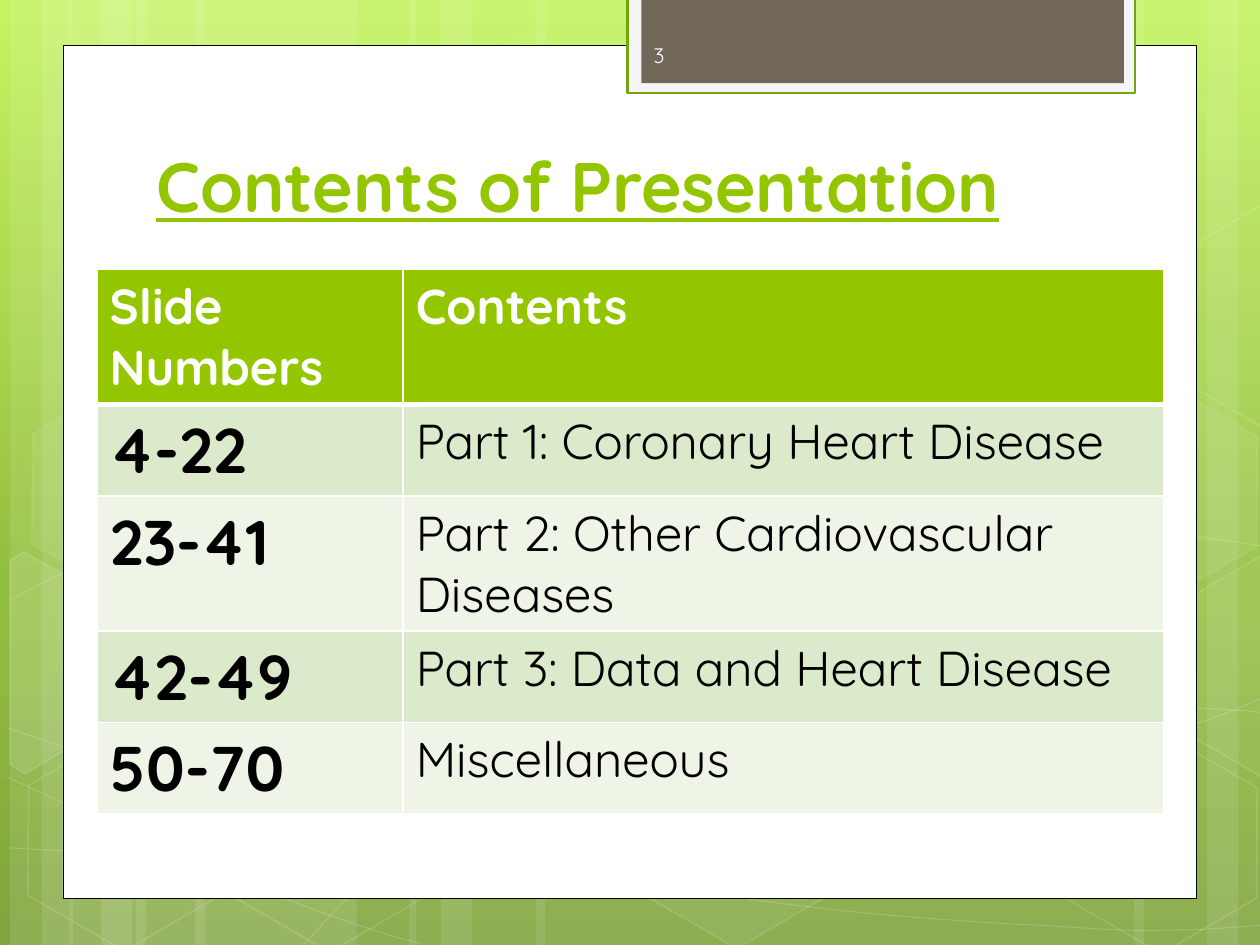
"""Build the contents slide of a heart disease presentation."""
from copy import deepcopy
from typing import NamedTuple, Optional

from lxml import etree
from pptx import Presentation
from pptx import util as u
from pptx.dml.color import RGBColor
from pptx.enum import shapes, text
from pptx.oxml import ns

FONT = "Quicksand"
COLORS = {
    "sky": "C3F35F", "leaf": "93BF3F", "moss": "81A53E", "white": "FFFFFF",
    "black": "000000", "smoke": "F5F5F5", "edge": "74A510", "taupe": "71685A",
    "lime": "94C600", "band": "DCEACC", "pale": "EEF5E7", "number": "FEFEFE",
}


class Panel(NamedTuple):
    left: float
    top: float
    width: float
    height: float
    fill: Optional[str] = None
    fill_alpha: int = 100
    line: Optional[str] = None
    line_width: float = 1
    line_alpha: int = 100
    preset: shapes.MSO_SHAPE = shapes.MSO_SHAPE.RECTANGLE
    rotation: float = 0


class Outline(NamedTuple):
    points: list
    fill_alpha: int = 0


class Entry(NamedTuple):
    slides: str
    topic: str


STRIPS = [(1.08, 1.75), (0.08, 0.5), (0.33, 0.83), (1.55, 1.75), (0.55, 0.5),
          (0.8, 0.83), (7.33, 1.75), (9.58, 0.5), (9, 0.83), (4.25, 3.08),
          (3.25, 0.5), (3.5, 0.83)]

WAVES = [
    [(0.07, 6.73), (0.61, 6.76), (1.15, 6.79), (1.9, 6.78), (2.65, 6.77),
     (3.58, 6.75), (4.58, 6.65), (5.58, 6.55), (7, 6.36), (7.92, 6.17),
     (8.83, 5.98), (9.77, 5.68), (10.07, 5.51)],
    [(0.07, 4.77), (0.36, 4.61), (0.65, 4.46), (1.21, 4.31), (1.78, 4.16),
     (2.59, 3.94), (3.47, 3.87), (4.36, 3.8), (5.44, 3.79), (6.54, 3.87),
     (7.64, 3.95), (9.47, 4.26), (10.07, 4.34)],
    [(0.06, 6.17), (1.27, 6.72), (2.47, 7.27), (3.34, 7.49)],
    [(0.07, 5.78), (0.38, 5.89), (0.7, 6), (1.28, 6.16), (1.86, 6.31),
     (2.73, 6.56), (3.57, 6.73), (4.4, 6.9), (5.45, 7.08), (6.28, 7.18),
     (7.11, 7.29), (8, 7.33), (8.53, 7.36), (9.05, 7.4), (9.19, 7.38),
     (9.45, 7.38), (9.71, 7.37), (9.89, 7.35), (10.07, 7.34)],
    [(2.42, 7.49), (2.6, 7.29), (2.78, 7.09), (3.02, 6.91), (3.26, 6.73),
     (3.6, 6.53), (3.88, 6.39), (4.16, 6.25), (4.33, 6.19), (4.7, 6.09),
     (5.06, 5.99), (5.73, 5.85), (6.08, 5.78), (6.44, 5.71), (6.49, 5.71),
     (6.8, 5.69), (7.11, 5.66), (7.6, 5.63), (7.94, 5.62), (8.29, 5.61),
     (8.86, 5.62), (8.86, 5.62), (9.08, 5.62), (9.31, 5.62), (9.53, 5.62),
     (9.71, 5.63), (9.88, 5.64), (9.97, 5.65), (10.06, 5.66), (10.03, 5.65),
     (10.06, 5.66)],
]

HEXAGONS = [(3.34, 0.36, 4, 8), (4.97, 5.89, 6, 12), (0.11, 5.91, 0, 12),
            (0.14, 3.12, 7, 8), (1.74, 5.92, 0, 12), (7.53, 4.53, 10, 12),
            (8.34, 5.93, 0, 12), (8.34, 3.14, 7, 8)]

CUT_HEXAGONS = [
    Outline([(0.08, 4.45), (0.19, 4.38), (0.96, 4.82), (0.95, 5.7),
             (0.2, 6.14), (0.08, 6.07)], 10),
    Outline([(9.26, 4.85), (10.01, 4.41), (10.09, 4.46), (10.09, 6.13),
             (10.02, 6.17), (9.26, 5.73)], 4),
    Outline([(9.26, 2.07), (10.01, 1.63), (10.1, 1.68), (10.09, 3.35),
             (10.02, 3.39), (9.26, 2.95)]),
]

FRAMES = [
    Panel(0.5, 0.36, 9, 6.77, "white", line="black", line_width=0.5),
    Panel(4.98, -0.02, 4.03, 0.76, "smoke", line="edge", line_width=1.25),
    Panel(5.09, -0.02, 3.83, 0.68, "taupe"),
]

ENTRIES = [
    Entry("Slide Numbers", "Contents"),
    Entry("4-22", "Part 1: Coronary Heart Disease"),
    Entry("23-41", "Part 2: Other Cardiovascular Diseases"),
    Entry("42-49", "Part 3: Data and Heart Disease"),
    Entry("50-70", "Miscellaneous"),
]


def rgb(name: str) -> RGBColor:
    """Look up a colour by name."""
    return RGBColor.from_string(COLORS[name])


def paint(shape, fill: Optional[str], fill_alpha: int, line: Optional[str],
          line_width: float, line_alpha: int) -> None:
    """Set fill and line with their opacity in percent."""
    shape.shadow.inherit = False
    for part, color, alpha, place in (
            (shape.fill, fill, fill_alpha, "p:spPr/a:solidFill/a:srgbClr"),
            (shape.line.fill, line, line_alpha, "p:spPr/a:ln/a:solidFill/a:srgbClr")):
        if color is None or alpha == 0:
            part.background()
            continue
        part.solid()
        part.fore_color.rgb = rgb(color)
        if alpha < 100:
            node = shape.element.xpath(place)[0]
            etree.SubElement(node, ns.qn("a:alpha"), val=str(alpha * 1000))
    if line:
        shape.line.width = u.Pt(line_width)


def draw_panel(slide, panel: Panel) -> None:
    """Draw a preset shape."""
    shape = slide.shapes.add_shape(panel.preset, *map(u.Inches, panel[:4]))
    if panel.preset == shapes.MSO_SHAPE.HEXAGON:
        shape.adjustments[0] = 0.285
    shape.rotation = panel.rotation
    paint(shape, *panel[4:9])


def draw_outline(slide, outline: Outline, close: bool, line_width: float,
                 line_alpha: int):
    """Draw a white freeform through the given points."""
    start, *rest = [(u.Inches(x), u.Inches(y)) for x, y in outline.points]
    builder = slide.shapes.build_freeform(*start)
    builder.add_line_segments(rest, close=close)
    shape = builder.convert_to_shape()
    paint(shape, "white", outline.fill_alpha, "white", line_width, line_alpha)
    return shape


def draw_wave(slide, controls: list) -> None:
    """Draw a chain of cubic Bezier curves."""
    wave = draw_outline(slide, Outline(controls[::3]), False, 0.5, 20)
    for index, segment in enumerate(wave.element.findall(".//" + ns.qn("a:lnTo"))):
        curve = etree.Element(ns.qn("a:cubicBezTo"))
        for x, y in controls[3 * index + 1:3 * index + 4]:
            etree.SubElement(curve, ns.qn("a:pt"), x=str(u.Inches(x) - wave.left),
                             y=str(u.Inches(y) - wave.top))
        segment.getparent().replace(segment, curve)


def move_to_master(slide, master) -> None:
    """Hand the decoration over to the slide master."""
    for shape in list(slide.shapes):
        if not shape.is_placeholder:
            shape.element.xpath("p:nvSpPr/p:cNvPr")[0].set("id", str(100 + shape.shape_id))
            master.shapes.element.append(shape.element)


def set_background(slide) -> None:
    """Fill the background with a vertical three-stop gradient."""
    fill = slide.background.fill
    fill.gradient()
    fill.gradient_angle = 270
    stops = slide.element.find(".//" + ns.qn("a:gsLst"))
    stops.append(deepcopy(stops[-1]))
    for stop, color, position in zip(fill.gradient_stops, ("sky", "leaf", "moss"),
                                     (0, 0.62, 1)):
        stop.color.rgb = rgb(color)
        stop.position = position


def format_text(frame, size: float, color: str, bold: bool = False,
                underline: bool = False) -> None:
    """Format the single run of a text frame."""
    font = frame.paragraphs[0].runs[0].font
    font.name, font.size, font.bold, font.underline = FONT, u.Pt(size), bold, underline
    font.color.rgb = rgb(color)


def set_borders(cell, widths: dict) -> None:
    """Give a cell white borders ahead of its fill."""
    properties = cell._tc.get_or_add_tcPr()
    for index, (side, width) in enumerate(widths.items()):
        border = etree.Element(ns.qn(f"a:{side}"), w=str(u.Pt(width)))
        solid = etree.SubElement(border, ns.qn("a:solidFill"))
        etree.SubElement(solid, ns.qn("a:srgbClr"), val=COLORS["white"])
        properties.insert(index, border)


def draw_contents(slide) -> None:
    """Draw the table of slide ranges and topics, with rows that grow to their text."""
    holder = slide.shapes.add_table(len(ENTRIES), 2, *map(u.Inches, (0.77, 2.14, 8.47, 4.17)))
    contents = holder.table
    for column, width in zip(contents.columns, (2.43, 6.04)):
        column.width = u.Inches(width)
    for row, entry in enumerate(ENTRIES):
        contents.rows[row].height = u.Inches(0.41)
        header = row == 0
        band = "lime" if header else ("pale", "band")[row % 2]
        sides = ("lnL", "lnR", "lnB") if row == 1 else ("lnL", "lnR", "lnT", "lnB")
        for column, wording in enumerate(entry):
            cell = contents.cell(row, column)
            cell.text_frame.text = wording
            format_text(cell.text_frame, 28 if header or column else 36,
                        "white" if header else "black", header or column == 0)
            cell.fill.solid()
            cell.fill.fore_color.rgb = rgb(band)
            set_borders(cell, {side: 3 if header and side == "lnB" else 1 for side in sides})
    holder.height = u.Inches(4.17)


def main() -> None:
    """Build and save the slide."""
    deck = Presentation()
    deck.slide_width, deck.slide_height = u.Inches(10), u.Inches(7.5)
    slide = deck.slides.add_slide(deck.slide_layouts[5])
    set_background(slide)
    for left, width in STRIPS:
        draw_panel(slide, Panel(left, 0, width, 7.5, "white", 10))
    for wave in WAVES:
        draw_wave(slide, wave)
    for left, top, fill_alpha, line_alpha in HEXAGONS:
        draw_panel(slide, Panel(left, top, 1.75, 1.52, "white", fill_alpha, "white", 1,
                                line_alpha, shapes.MSO_SHAPE.HEXAGON, 30))
    for hexagon in CUT_HEXAGONS:
        draw_outline(slide, hexagon, True, 1, 12)
    for frame in FRAMES:
        draw_panel(slide, frame)
    move_to_master(slide, deck.slide_master)

    title = slide.shapes.title
    title.left, title.top, title.width, title.height = map(u.Inches, (1.14, 0.6, 7.68, 1.25))
    title.text_frame.text = "Contents of Presentation"
    title.text_frame.auto_size = text.MSO_AUTO_SIZE.NONE
    title.text_frame.vertical_anchor = text.MSO_ANCHOR.BOTTOM
    title.text_frame.paragraphs[0].alignment = text.PP_ALIGN.LEFT
    format_text(title.text_frame, 40, "lime", True, True)

    draw_contents(slide)
    number = slide.shapes.add_textbox(*map(u.Inches, (5.09, 0.24, 1.46, 0.4))).text_frame
    number.text = "3"
    number.word_wrap = True
    number.vertical_anchor = text.MSO_ANCHOR.MIDDLE
    format_text(number, 12, "number")
    deck.save("out.pptx")


if __name__ == "__main__":
    main()
